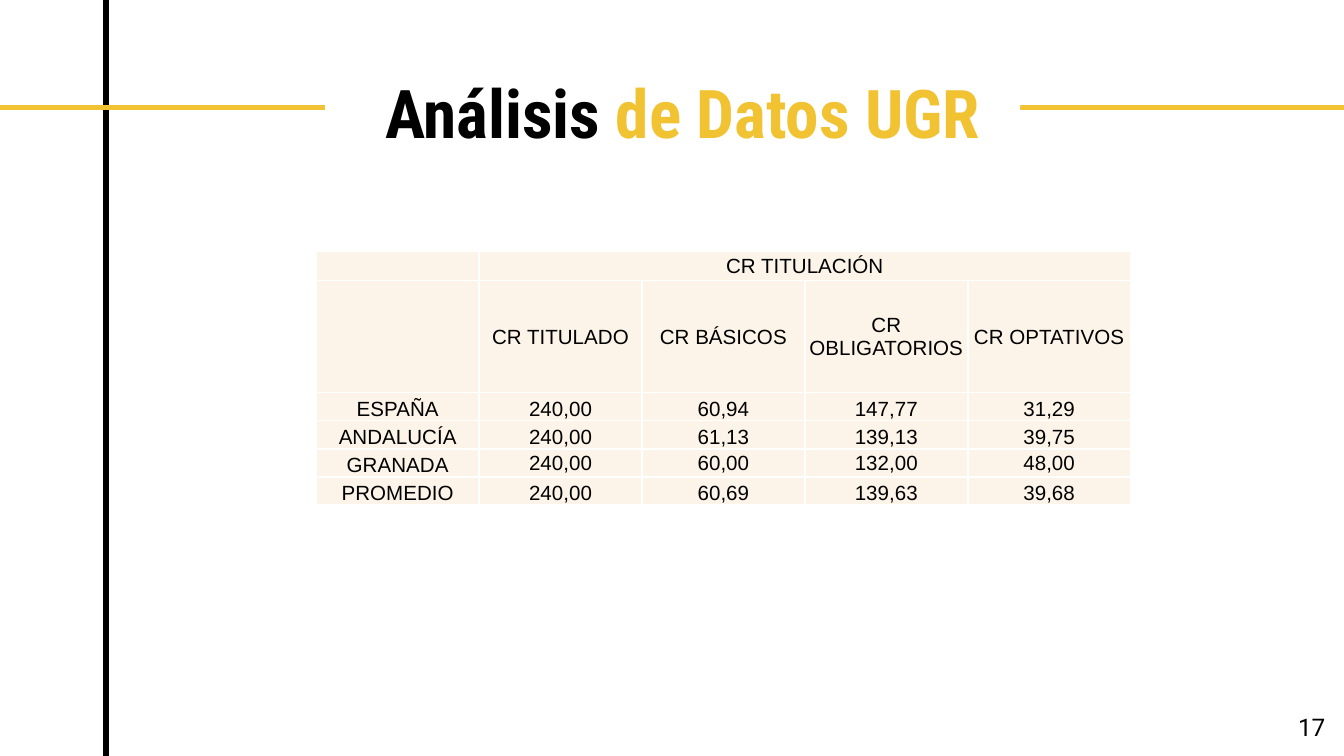
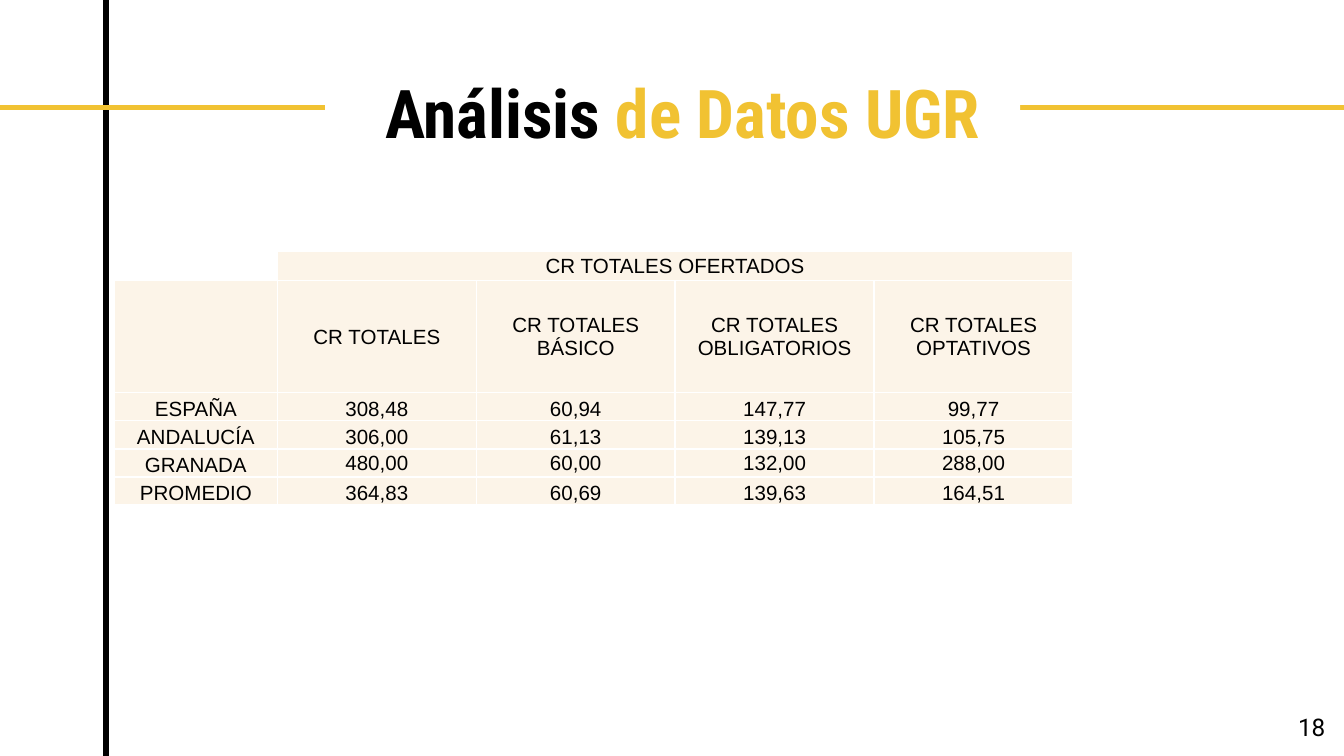
from dataclasses import dataclass
from lxml import etree
from pptx import Presentation
from pptx.dml.color import RGBColor
from pptx.enum.shapes import MSO_CONNECTOR, MSO_SHAPE
from pptx.enum.text import MSO_ANCHOR, MSO_AUTO_SIZE, PP_ALIGN
from pptx.oxml.ns import qn
from pptx.util import Inches, Pt

STRAIGHT = MSO_CONNECTOR.STRAIGHT
RECTANGLE = MSO_SHAPE.RECTANGLE
TOP, MIDDLE, BOTTOM = MSO_ANCHOR.TOP, MSO_ANCHOR.MIDDLE, MSO_ANCHOR.BOTTOM
CENTER, RIGHT = PP_ALIGN.CENTER, PP_ALIGN.RIGHT
NO_FIT = MSO_AUTO_SIZE.NONE

COLORS = {"ink": "000000", "gold": "F1C232", "paper": "FFFFFF", "cream": "FCF4E8"}
COLUMNS, ROWS = 100, 56.25
TITLE_ONLY = 5
TITLE = [("Análisis ", "ink"), ("de Datos UGR", "gold")]
REGIONS = ["ESPAÑA", "ANDALUCÍA", "GRANADA", "PROMEDIO"]
SPAN_HEIGHT, HEADING_HEIGHT, REGION_HEIGHT = 2.15, 8.33, 2.1
LABEL_WIDTH, OFFER_WIDTH = 12.12, 14.8

DEGREE_ROWS = [
    ["", "CR TITULACIÓN", "", "", ""],
    ["", "CR TITULADO", "CR BÁSICOS", "CR OBLIGATORIOS", "CR OPTATIVOS"],
    ["ESPAÑA", "240,00", "60,94", "147,77", "31,29"],
    ["ANDALUCÍA", "240,00", "61,13", "139,13", "39,75"],
    ["GRANADA", "240,00", "60,00", "132,00", "48,00"],
    ["PROMEDIO", "240,00", "60,69", "139,63", "39,68"],
]
OFFER_ROWS = [
    ["CR TOTALES OFERTADOS", "", "", ""],
    ["CR TOTALES", "CR TOTALES BÁSICO", "CR TOTALES OBLIGATORIOS", "CR TOTALES OPTATIVOS"],
    ["308,48", "60,94", "147,77", "99,77"],
    ["306,00", "61,13", "139,13", "105,75"],
    ["480,00", "60,00", "132,00", "288,00"],
    ["364,83", "60,69", "139,63", "164,51"],
]
REGION_ROWS = [[""]] + [[region] for region in REGIONS]


def grid(units):
    return Inches(units / 10)


@dataclass
class Box:
    left: float
    top: float
    width: float
    height: float

    def lengths(self):
        return [grid(part) for part in (self.left, self.top, self.width, self.height)]


TITLE_BOX = Box(25.4, 4.3, 50.8, 7.7)
TITLE_GAP = Box(24.2, 0.9, 51.7, 11.3)
NUMBER_BOX = Box(93.6, 51.9, 6, 4.3)


def color(name):
    return RGBColor.from_string(COLORS[name])


def add_span(para, text, font, size, ink="ink", bold=False):
    span = para.add_run()
    span.text = text
    span.font.name = font
    span.font.size = Pt(size)
    span.font.bold = bold
    span.font.color.rgb = color(ink)


def add_rule(page, start, end, ink):
    rule = page.shapes.add_connector(STRAIGHT, *[grid(part) for part in start + end])
    rule.line.color.rgb = color(ink)
    rule.line.width = Pt(3)
    etree.SubElement(rule._element.spPr, qn("a:effectLst"))
    return rule


def add_backdrop(page, layout):
    upright = add_rule(page, (7.9, -0.2), (7.9, 56.5), "ink")
    across = add_rule(page, (102.3, 8), (-0.5, 8), "gold")
    gap = page.shapes.add_shape(RECTANGLE, *TITLE_GAP.lengths())
    gap.shadow.inherit = False
    gap.fill.solid()
    gap.fill.fore_color.rgb = color("paper")
    gap.line.fill.background()
    for part in (upright, across, gap):
        layout.shapes._spTree.append(part._element)


def format_frame(frame, anchor, align):
    frame.word_wrap = True
    frame.auto_size = NO_FIT
    frame.vertical_anchor = anchor
    frame.margin_left = frame.margin_right = grid(1)
    frame.margin_top = frame.margin_bottom = grid(1)
    para = frame.paragraphs[0]
    para.alignment = align
    return para


def add_title(page, box):
    title = page.shapes.title
    title.left, title.top, title.width, title.height = box.lengths()
    para = format_frame(title.text_frame, TOP, CENTER)
    for text, ink in TITLE:
        add_span(para, text, "Roboto Condensed", 36, ink, True)


def add_number(page, box, number):
    holder = page.shapes.add_textbox(*box.lengths())
    para = format_frame(holder.text_frame, MIDDLE, RIGHT)
    add_span(para, str(number), "Roboto", 13)


def add_borders(cell):
    properties = cell._tc.get_or_add_tcPr()
    for side in ("a:lnL", "a:lnR", "a:lnT", "a:lnB"):
        border = etree.SubElement(properties, qn(side), w=str(Pt(1)))
        fill = etree.SubElement(border, qn("a:solidFill"))
        etree.SubElement(fill, qn("a:srgbClr"), val=COLORS["paper"])


def fill_cell(cell, text, anchor):
    add_borders(cell)
    cell.fill.solid()
    cell.fill.fore_color.rgb = color("cream")
    cell.margin_left = cell.margin_right = cell.margin_top = grid(0.1)
    cell.margin_bottom = 0
    cell.vertical_anchor = anchor
    para = cell.text_frame.paragraphs[0]
    para.alignment = CENTER
    if text:
        add_span(para, text, "Arial", 11)
    else:
        etree.SubElement(para._p, qn("a:endParaRPr"), sz="1100")


def add_grid_table(page, left, bottom, column_width, rows, span_from=None):
    heights = [HEADING_HEIGHT] + [REGION_HEIGHT] * len(REGIONS)
    if span_from is not None:
        heights.insert(0, SPAN_HEIGHT)
    count = len(rows[0])
    box = Box(left, bottom - sum(heights), column_width * count, sum(heights))
    table = page.shapes.add_table(len(rows), count, *box.lengths()).table
    table.first_row = table.horz_banding = False
    for column in table.columns:
        column.width = grid(column_width)
    first_region = len(rows) - len(REGIONS)
    granada = first_region + REGIONS.index("GRANADA")
    for row, texts in enumerate(rows):
        table.rows[row].height = grid(heights[row])
        for column, text in enumerate(texts):
            centred = row < first_region or (row == granada and text not in REGIONS)
            fill_cell(table.cell(row, column), text, MIDDLE if centred else BOTTOM)
    if span_from is not None:
        table.cell(0, span_from).merge(table.cell(0, count - 1))


def add_page(deck, number):
    page = deck.slides.add_slide(deck.slide_layouts[TITLE_ONLY])
    add_title(page, TITLE_BOX)
    add_number(page, NUMBER_BOX, number)
    return page


def main():
    deck = Presentation()
    deck.slide_width, deck.slide_height = grid(COLUMNS), grid(ROWS)
    table_bottom = 37.6

    degree_page = add_page(deck, 17)
    add_backdrop(degree_page, deck.slide_layouts[TITLE_ONLY])
    add_grid_table(degree_page, 23.53, table_bottom, LABEL_WIDTH, DEGREE_ROWS, 1)

    offer_page = add_page(deck, 18)
    add_grid_table(offer_page, 8.52 + LABEL_WIDTH, table_bottom, OFFER_WIDTH, OFFER_ROWS, 0)
    add_grid_table(offer_page, 8.52, table_bottom, LABEL_WIDTH, REGION_ROWS)

    deck.save("out.pptx")


if __name__ == "__main__":
    main()
